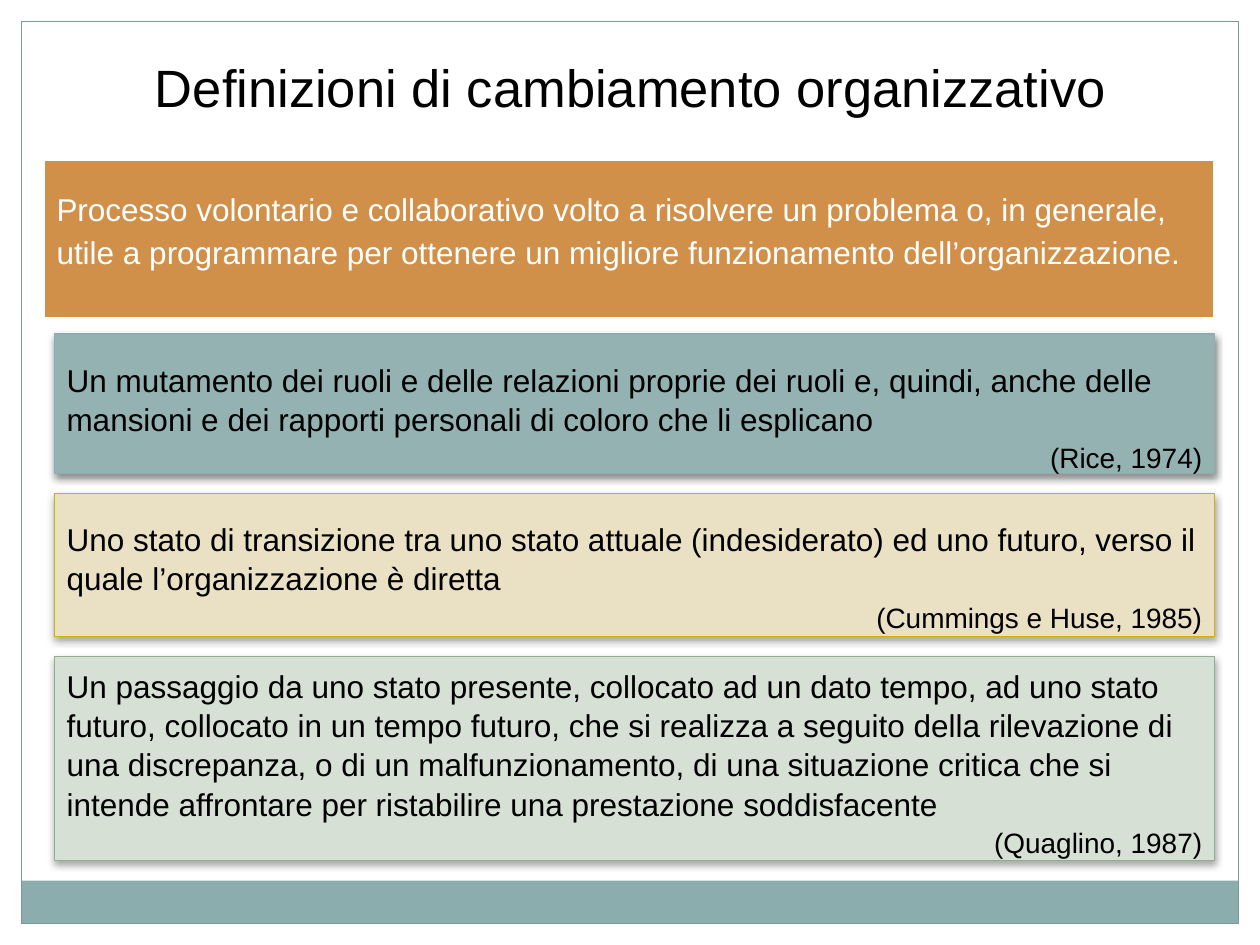
import lxml.etree
import pptx
import pptx.dml.color
import pptx.enum.shapes
import pptx.enum.text
import pptx.oxml.ns
import pptx.util

RGB = pptx.dml.color.RGBColor
Inches, Pt = pptx.util.Inches, pptx.util.Pt
ALIGN = pptx.enum.text.PP_ALIGN
ANCHOR = pptx.enum.text.MSO_ANCHOR
qn = pptx.oxml.ns.qn

BLACK, WHITE = RGB(0, 0, 0), RGB(255, 255, 255)
TEAL, FRAME = RGB(0x8C, 0xAD, 0xAE), RGB(0x7C, 0x99, 0x9A)
ORANGE, BLUE = RGB(0xD1, 0x90, 0x49), RGB(0x95, 0xB2, 0xB3)
SAND, GOLD = RGB(0xEA, 0xE1, 0xC5), RGB(0xCC, 0xB4, 0x00)
MINT, GREEN = RGB(0xD6, 0xE0, 0xD5), RGB(0x8F, 0xB0, 0x8C)
FONT = "Arial"
WIDTH, HEIGHT, MARGIN = 10, 7.5, 0.17
BAND_H = 0.34
GAP = 0.155

TITLE = "Definizioni di cambiamento organizzativo"
INTRO = ("Processo volontario e collaborativo volto a risolvere un problema o, in generale, "
         "utile a programmare per ottenere un migliore funzionamento dell’organizzazione.")
DEFINITIONS = [
    dict(text="Un mutamento dei ruoli e delle relazioni proprie dei ruoli e, quindi, anche delle "
              "mansioni e dei rapporti personali di coloro che li esplicano",
         source="(Rice, 1974)", fill=BLUE, line=TEAL, height=1.11, inset=0.2, shade=45),
    dict(text="Uno stato di transizione tra uno stato attuale (indesiderato) ed uno futuro, verso il "
              "quale l’organizzazione è diretta",
         source="(Cummings e Huse, 1985)", fill=SAND, line=GOLD, height=1.14, inset=0.2, shade=35),
    dict(text="Un passaggio da uno stato presente, collocato ad un dato tempo, ad uno stato futuro, "
              "collocato in un tempo futuro, che si realizza a seguito della rilevazione di una "
              "discrepanza, o di un malfunzionamento, di una situazione critica che si intende "
              "affrontare per ristabilire una prestazione soddisfacente",
         source="(Quaglino, 1987)", fill=MINT, line=GREEN, height=1.62, inset=0.07, shade=35),
]


def add_box(s, left, top, width, height, fill=None, line=None, weight=0.75):
    sp = s.shapes.add_shape(pptx.enum.shapes.MSO_SHAPE.RECTANGLE,
                            Inches(left), Inches(top), Inches(width), Inches(height))
    sp.shadow.inherit = False
    if fill is None:
        sp.fill.background()
    else:
        sp.fill.solid()
        sp.fill.fore_color.rgb = fill
    if line is None:
        sp.line.fill.background()
    else:
        sp.line.color.rgb = line
        sp.line.width = Pt(weight)
    return sp


def set_frame(sp, anchor, inset=0.05):
    tf = sp.text_frame
    tf.word_wrap = True
    tf.vertical_anchor = anchor
    tf.margin_top = Inches(inset)
    return tf


def write(p, text, size, color, align=ALIGN.LEFT, spacing=1.0):
    p.alignment = align
    p.line_spacing = spacing
    r = p.add_run()
    r.text = text
    r.font.name = FONT
    r.font.size = Pt(size)
    r.font.color.rgb = color


def add_shadow(sp, opacity):
    effects = sp._element.spPr.find(qn("a:effectLst"))
    shadow = lxml.etree.SubElement(effects, qn("a:outerShdw"), blurRad=str(Pt(4)),
                                   dist=str(Pt(2)), dir="5400000", rotWithShape="0")
    color = lxml.etree.SubElement(shadow, qn("a:srgbClr"), val=str(BLACK))
    lxml.etree.SubElement(color, qn("a:alpha"), val=str(opacity * 1000))


def main():
    prs = pptx.Presentation()
    prs.slide_width, prs.slide_height = Inches(WIDTH), Inches(HEIGHT)
    s = prs.slides.add_slide(prs.slide_layouts[6])

    inner_w, inner_h = WIDTH - 2 * MARGIN, HEIGHT - 2 * MARGIN
    add_box(s, MARGIN, HEIGHT - MARGIN - BAND_H, inner_w, BAND_H, TEAL)
    add_box(s, MARGIN, MARGIN, inner_w, inner_h, line=FRAME)

    title = s.shapes.add_textbox(Inches(0.2), Inches(0.16), Inches(9.61), Inches(0.83))
    write(set_frame(title, ANCHOR.BOTTOM).paragraphs[0], TITLE, 30, BLACK, ALIGN.CENTER)

    intro = add_box(s, 0.35, 1.27, 9.29, 1.26, ORANGE, WHITE, 1.5)
    write(set_frame(intro, ANCHOR.TOP, 0.2).paragraphs[0], INTRO, 18, WHITE, spacing=1.13)

    top = 2.65
    for d in DEFINITIONS:
        sp = add_box(s, 0.43, top, 9.21, d["height"], d["fill"], d["line"])
        add_shadow(sp, d["shade"])
        tf = set_frame(sp, ANCHOR.TOP, d["inset"])
        write(tf.paragraphs[0], d["text"], 18, BLACK, spacing=1.04)
        p = tf.add_paragraph()
        p.space_before = Pt(1)
        write(p, d["source"], 16, BLACK, ALIGN.RIGHT, 1.04)
        top += d["height"] + GAP

    prs.save("out.pptx")


if __name__ == "__main__":
    main()
